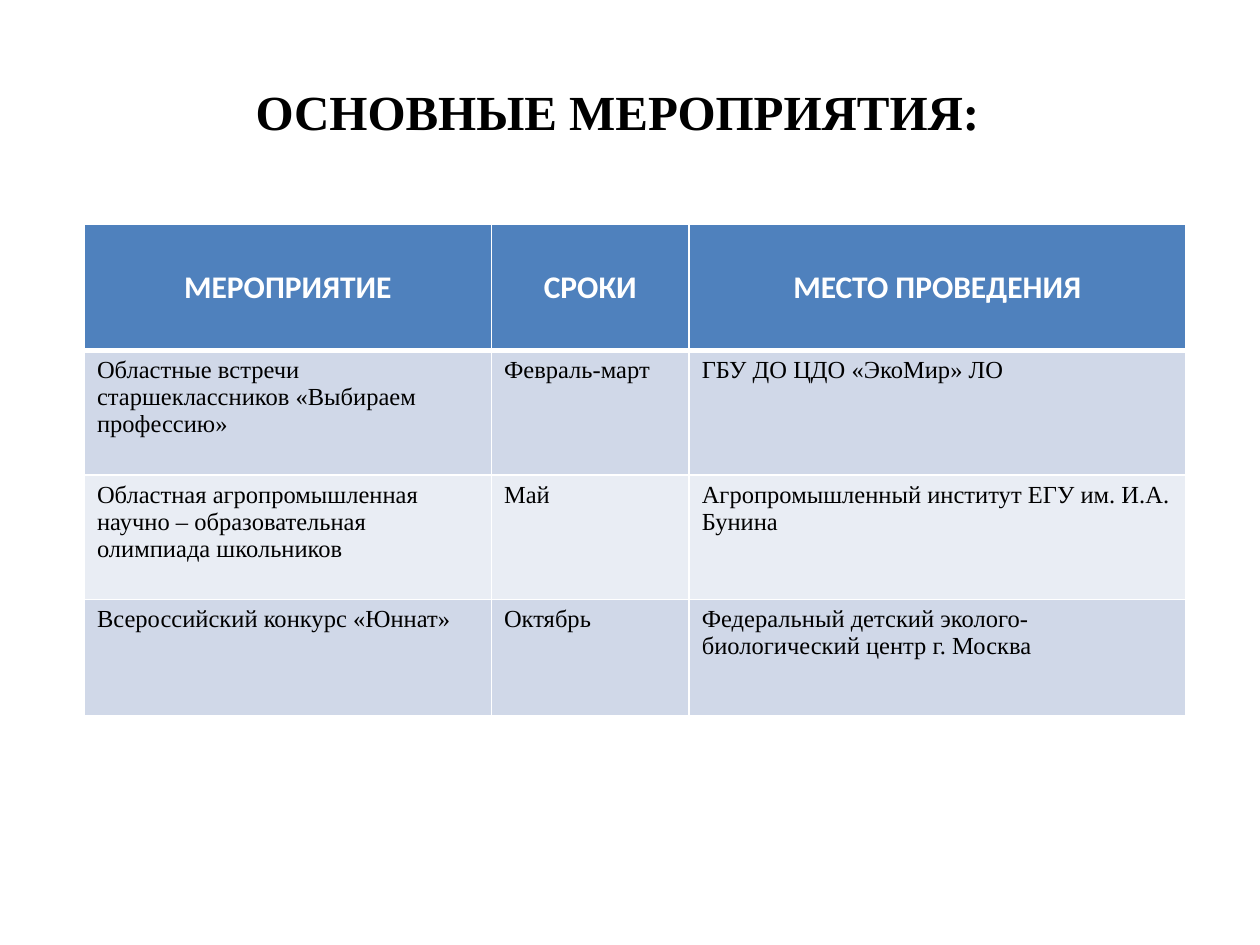
from dataclasses import dataclass
from lxml import etree
from pptx import Presentation
from pptx import util as u
from pptx.dml.color import RGBColor
from pptx.enum import text
from pptx.oxml.ns import qn


@dataclass
class Theme:
    head: str = "4F81BD"
    bands: tuple = ("D0D8E8", "E9EDF4")
    light: str = "FFFFFF"
    dark: str = "000000"
    sans: str = "Calibri"
    serif: str = "Times New Roman"
    title: int = 28
    label: int = 18
    body: int = 14
    thin: int = 1
    thick: int = 3


class Deck:
    def __init__(self, theme):
        self.theme = theme
        self.prs = Presentation()
        self.prs.slide_width, self.prs.slide_height = u.Inches(10), u.Inches(7.5)
        self.slide = self.prs.slides.add_slide(self.prs.slide_layouts[6])

    def letter(self, frame, lines, face, size, color, bold=False, align=None):
        for i, line in enumerate(lines):
            para = frame.paragraphs[0] if i == 0 else frame.add_paragraph()
            para.alignment = align
            run = para.add_run()
            run.text = line
            font = run.font
            font.name, font.size, font.bold = face, u.Pt(size), bold
            font.color.rgb = RGBColor.from_string(color)

    def title(self, line, *box):
        frame = self.slide.shapes.add_textbox(*map(u.Inches, box)).text_frame
        frame.word_wrap = True
        t = self.theme
        self.letter(frame, [line], t.serif, t.title, t.dark, bold=True)

    def border(self, cell, side, width):
        props = cell._tc.get_or_add_tcPr()
        line = etree.SubElement(props, qn(f"a:ln{side}"), w=str(u.Pt(width)))
        fill = etree.SubElement(line, qn("a:solidFill"))
        etree.SubElement(fill, qn("a:srgbClr"), val=self.theme.light)

    def cell(self, cell, row, lines):
        t = self.theme
        thick = {0: "B", 1: "T"}.get(row)
        for side in "LRTB":
            self.border(cell, side, t.thick if side == thick else t.thin)
        cell.fill.solid()
        color = t.bands[(row - 1) % 2] if row else t.head
        cell.fill.fore_color.rgb = RGBColor.from_string(color)
        if row:
            self.letter(cell.text_frame, lines, t.serif, t.body, t.dark)
        else:
            cell.vertical_anchor = text.MSO_ANCHOR.MIDDLE
            self.letter(cell.text_frame, lines, t.sans, t.label, t.light,
                        bold=True, align=text.PP_ALIGN.CENTER)

    def table(self, left, top, widths, heights, rows):
        box = map(u.Inches, (left, top, sum(widths), sum(heights)))
        grid = self.slide.shapes.add_table(len(rows), len(widths), *box).table
        for col, width in zip(grid.columns, widths):
            col.width = u.Inches(width)
        for r, (row, height) in enumerate(zip(rows, heights)):
            grid.rows[r].height = u.Inches(height)
            for c, lines in enumerate(row):
                self.cell(grid.cell(r, c), r, lines)


def main():
    deck = Deck(Theme())
    deck.table(0.67, 1.78, (3.23, 1.57, 3.94), (1, 0.99, 0.99, 0.92), [
        (["МЕРОПРИЯТИЕ"], ["СРОКИ"], ["МЕСТО ПРОВЕДЕНИЯ"]),
        (["Областные встречи старшеклассников «Выбираем профессию»"],
         ["Февраль-март"],
         ["ГБУ ДО ЦДО «ЭкоМир» ЛО"]),
        (["Областная агропромышленная",
          "научно – образовательная олимпиада школьников"],
         ["Май"],
         ["Агропромышленный институт ЕГУ им. И.А. Бунина"]),
        (["Всероссийский конкурс «Юннат»"],
         ["Октябрь"],
         ["Федеральный детский эколого-биологический центр г. Москва"]),
    ])
    deck.title("ОСНОВНЫЕ МЕРОПРИЯТИЯ:", 1.93, 0.6, 6.06, 0.57)
    deck.prs.save("out.pptx")


if __name__ == "__main__":
    main()
